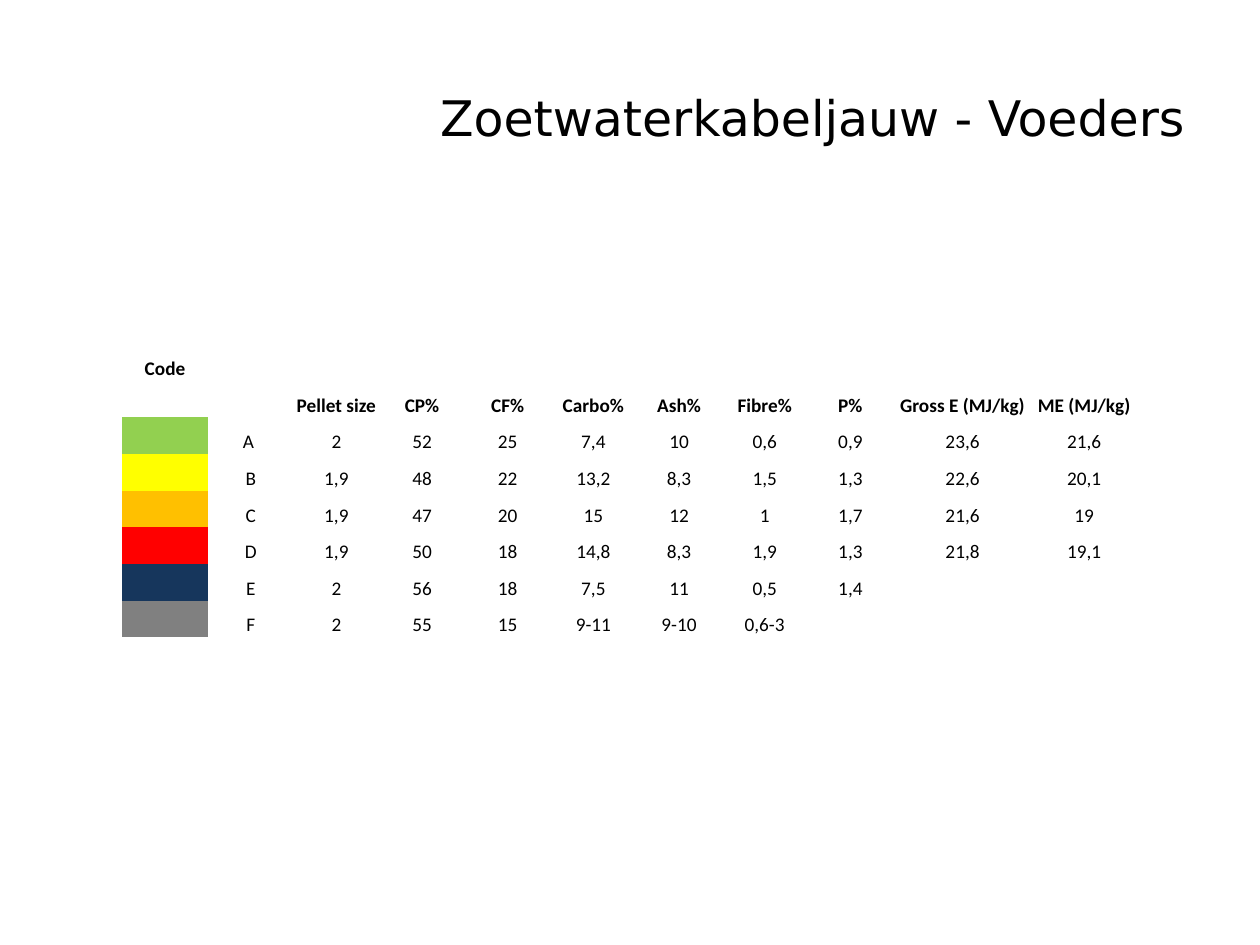
from dataclasses import dataclass

from pptx import Presentation
from pptx.dml.color import RGBColor
from pptx.enum.text import MSO_ANCHOR as Anchor, PP_ALIGN as Align
from pptx.util import Inches, Pt


@dataclass(frozen=True)
class Theme:
    text: RGBColor = RGBColor(0, 0, 0)
    title_font: str = "DejaVu Sans"
    title_size: Pt = Pt(28)
    table_font: str = "Calibri"
    table_size: Pt = Pt(11)
    plain_table_style: str = "{2D5ABB26-0587-4C30-8999-92F81FD0307C}"


THEME = Theme()

HEADERS = ["Pellet size", "CP%", "CF%", "Carbo%", "Ash%", "Fibre%", "P%",
           "Gross E (MJ/kg)", "ME (MJ/kg)"]

# Code colour, feed name, then one value per header
FEEDS = [
    ("92D050", "A ", "2", "52", "25", "7,4", "10", "0,6", "0,9", "23,6", "21,6"),
    ("FFFF00", "B", "1,9", "48", "22", "13,2", "8,3", "1,5", "1,3", "22,6", "20,1"),
    ("FFC000", "C", "1,9", "47", "20", "15", "12", "1", "1,7", "21,6", "19"),
    ("FF0000", "D", "1,9", "50", "18", "14,8", "8,3", "1,9", "1,3", "21,8", "19,1"),
    ("16365C", "E", "2", "56", "18", "7,5", "11", "0,5", "1,4"),
    ("808080", "F", "2", "55", "15", "9-11", "9-10", "0,6-3"),
]
COLUMN_WIDTHS = [0.68] * 9 + [1.1, 0.83]


def format_runs(paragraph, font_name, size, bold=False):
    for run in paragraph.runs:
        run.font.name = font_name
        run.font.size = size
        run.font.bold = bold
        run.font.color.rgb = THEME.text


def set_title(slide, text):
    title = slide.shapes.title
    title.left, title.top = Inches(0.5), Inches(0.3)
    title.width, title.height = Inches(9), Inches(1.25)
    title.text_frame.text = text
    title.text_frame.vertical_anchor = Anchor.MIDDLE
    paragraph = title.text_frame.paragraphs[0]
    paragraph.alignment = Align.RIGHT
    format_runs(paragraph, THEME.title_font, THEME.title_size)


def fill_cell(cell, text, bold):
    cell.fill.background()
    cell.vertical_anchor = Anchor.BOTTOM
    cell.margin_left = cell.margin_right = cell.margin_top = Inches(0.01)
    cell.margin_bottom = 0
    paragraph = cell.text_frame.paragraphs[0]
    paragraph.alignment = Align.CENTER
    if text:
        paragraph.text = text
        format_runs(paragraph, THEME.table_font, THEME.table_size, bold)
    else:
        # An empty cell needs its own type size, or it stretches the row
        end_properties = paragraph._p.get_or_add_endParaRPr()
        end_properties.set("sz", str(int(THEME.table_size.pt * 100)))


def add_feed_table(slide):
    rows = [["Code"], ["", "", *HEADERS]] + [["", *feed[1:]] for feed in FEEDS]
    height = Inches(2.33)
    frame = slide.shapes.add_table(len(rows), len(COLUMN_WIDTHS), Inches(0.97),
                                   Inches(2.73), Inches(sum(COLUMN_WIDTHS)), height)
    table = frame.table
    table.first_row = table.horz_banding = False
    table._tbl.tblPr[0].text = THEME.plain_table_style

    for column, width in zip(table.columns, COLUMN_WIDTHS):
        column.width = Inches(width)
    for row_index, (row, texts) in enumerate(zip(table.rows, rows)):
        row.height = height // len(rows)
        for column_index, cell in enumerate(row.cells):
            text = texts[column_index] if column_index < len(texts) else ""
            fill_cell(cell, text, bold=row_index < 2)

    # Colour codes in the first column
    for row_index, feed in enumerate(FEEDS, start=2):
        code_cell = table.cell(row_index, 0)
        code_cell.fill.solid()
        code_cell.fill.fore_color.rgb = RGBColor.from_string(feed[0])


def main():
    presentation = Presentation()
    presentation.slide_width, presentation.slide_height = Inches(10), Inches(7.5)
    slide = presentation.slides.add_slide(presentation.slide_layouts[5])
    set_title(slide, "Zoetwaterkabeljauw - Voeders")
    add_feed_table(slide)
    presentation.save("out.pptx")


if __name__ == "__main__":
    main()
